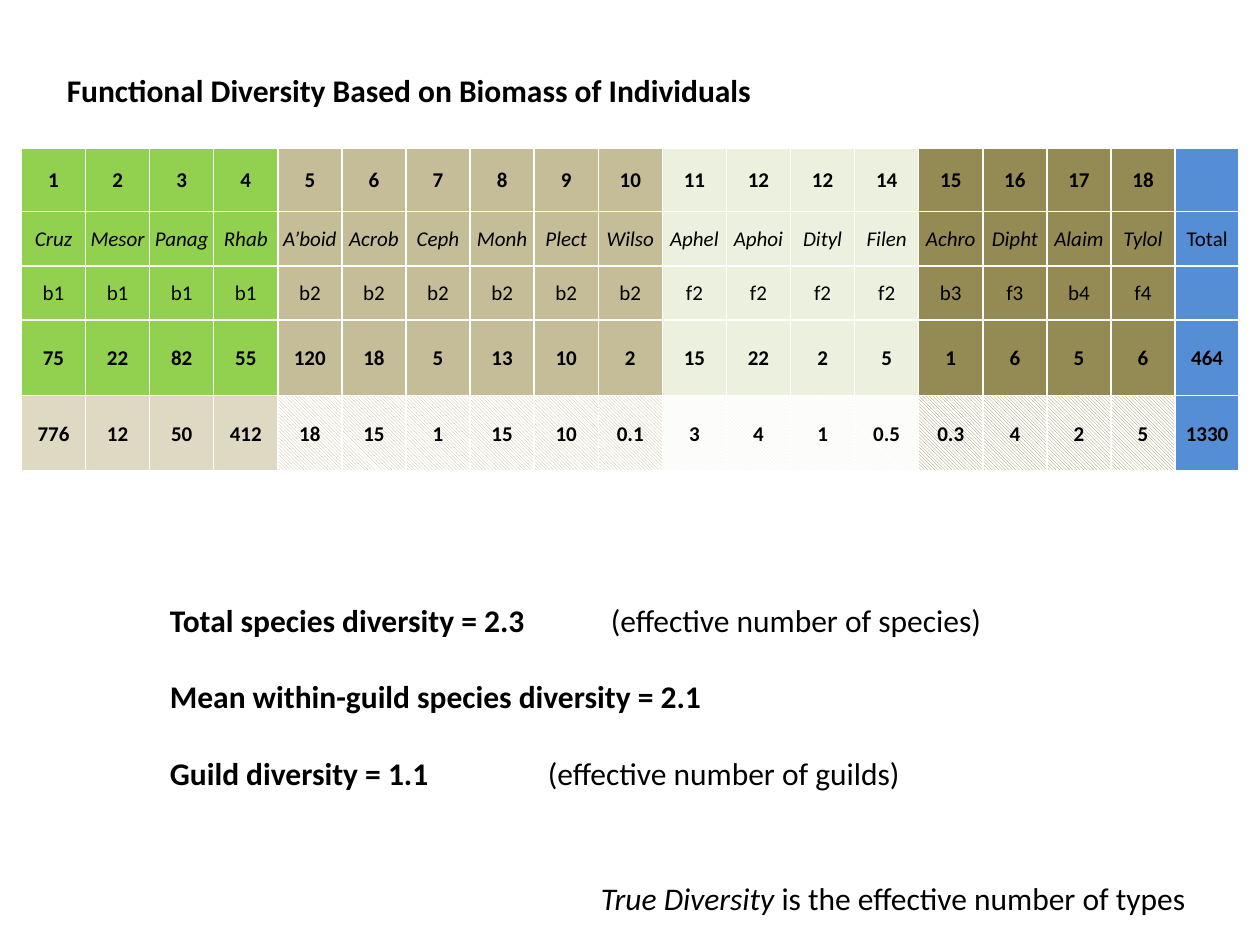
"""Build the functional diversity slide."""
import dataclasses

import lxml.etree
import pptx
import pptx.dml.color
import pptx.enum.dml
import pptx.enum.text
import pptx.oxml.ns
import pptx.util

Inches = pptx.util.Inches
Pt = pptx.util.Pt
Align = pptx.enum.text.PP_ALIGN
Anchor = pptx.enum.text.MSO_ANCHOR


@dataclasses.dataclass(frozen=True)
class Theme:
    font: str = "Calibri"
    ink: str = "000000"
    paper: str = "FFFFFF"
    pale: str = "DDD9C3"
    total: str = "558ED5"
    groups: tuple = (("92D050", 4), ("C4BD97", 6), ("EBF1DE", 4), ("948A54", 4))
    body_size: int = 18
    cell_size: int = 12
    paragraph_gap: int = 22
    border: int = 1


def color(value):
    return pptx.dml.color.RGBColor.from_string(value)


def add_text(para, text, *, theme, size, bold=False, italic=False):
    span = para.add_run()
    span.text = text
    span.font.name = theme.font
    span.font.size = Pt(size)
    span.font.bold = bold
    span.font.italic = italic
    span.font.color.rgb = color(theme.ink)


class SlideBuilder:
    def __init__(self, page, theme):
        self.page = page
        self.theme = theme

    def fit(self, box):
        frame = box.text_frame
        frame.word_wrap = False
        frame.auto_size = pptx.enum.text.MSO_AUTO_SIZE.SHAPE_TO_FIT_TEXT
        frame.vertical_anchor = Anchor.TOP
        return frame

    def title(self, text, left, top, width, height):
        box = self.page.shapes.title
        box.left, box.top = Inches(left), Inches(top)
        box.width, box.height = Inches(width), Inches(height)
        para = self.fit(box).paragraphs[0]
        para.alignment = Align.LEFT
        add_text(para, text, theme=self.theme, size=self.theme.body_size, bold=True)

    def text(self, paragraphs, left, top, width, height):
        box = self.page.shapes.add_textbox(
            Inches(left), Inches(top), Inches(width), Inches(height))
        frame = self.fit(box)
        for index, spans in enumerate(paragraphs):
            para = frame.add_paragraph() if index else frame.paragraphs[0]
            para.space_before = Pt(self.theme.paragraph_gap if index else 0)
            for text, style in spans:
                add_text(para, text, theme=self.theme, size=self.theme.body_size, **style)

    def table(self, rows, heights, left, top, width):
        count = len(rows[0])
        table = self.page.shapes.add_table(
            len(rows), count, Inches(left), Inches(top),
            Inches(width), Inches(sum(heights))).table
        table.first_row = table.horz_banding = False
        for column in table.columns:
            column.width = Inches(width / count)
        for row, height in zip(table.rows, heights):
            row.height = Inches(height)
        shades = [shade for shade, span in self.theme.groups for _ in range(span)]
        shades.append(self.theme.total)
        for row_index, values in enumerate(rows):
            for column_index, value in enumerate(values):
                cell = table.cell(row_index, column_index)
                self.cell_text(cell, value, row_index)
                self.cell_fill(cell, shades[column_index], row_index == len(rows) - 1)
                self.cell_border(cell)

    def cell_text(self, cell, text, row_index):
        cell.margin_left = cell.margin_right = cell.margin_top = Inches(0.01)
        cell.margin_bottom = 0
        cell.vertical_anchor = Anchor.MIDDLE
        para = cell.text_frame.paragraphs[0]
        para.alignment = Align.CENTER
        para.font.size = Pt(self.theme.cell_size)
        if text:
            add_text(para, text, theme=self.theme, size=self.theme.cell_size,
                     bold=row_index not in (1, 2),
                     italic=row_index == 1 and text != "Total")

    def cell_fill(self, cell, shade, is_biomass):
        first_shade = self.theme.groups[0][0]
        if is_biomass and shade not in (first_shade, self.theme.total):
            cell.fill.patterned()
            cell.fill.pattern = pptx.enum.dml.MSO_PATTERN.LIGHT_DOWNWARD_DIAGONAL
            cell.fill.fore_color.rgb = color(shade)
            cell.fill.back_color.rgb = color(self.theme.paper)
        else:
            cell.fill.solid()
            pale = is_biomass and shade == first_shade
            cell.fill.fore_color.rgb = color(self.theme.pale if pale else shade)

    def cell_border(self, cell):
        qn = pptx.oxml.ns.qn
        properties = cell._tc.get_or_add_tcPr()
        for index, side in enumerate(("a:lnL", "a:lnR", "a:lnT", "a:lnB")):
            line = lxml.etree.Element(qn(side), w=str(Pt(self.theme.border)))
            fill = lxml.etree.SubElement(line, qn("a:solidFill"))
            lxml.etree.SubElement(fill, qn("a:srgbClr"), val=self.theme.paper)
            properties.insert(index, line)


def main():
    deck = pptx.Presentation()
    deck.slide_width, deck.slide_height = Inches(10), Inches(7.5)
    page = deck.slides.add_slide(deck.slide_layouts[5])
    builder = SlideBuilder(page, Theme())

    builder.title("Functional Diversity Based on Biomass of Individuals",
                  0.43, 0.51, 5.68, 0.4)

    numbers = "1 2 3 4 5 6 7 8 9 10 11 12 12 14 15 16 17 18".split() + [""]
    genera = ("Cruz Mesor Panag Rhab A’boid Acrob Ceph Monh Plect Wilso "
              "Aphel Aphoi Dityl Filen Achro Dipht Alaim Tylol Total").split()
    guilds = ["b1"] * 4 + ["b2"] * 6 + ["f2"] * 4 + ["b3", "f3", "b4", "f4", ""]
    counts = "75 22 82 55 120 18 5 13 10 2 15 22 2 5 1 6 5 6 464".split()
    biomass = "776 12 50 412 18 15 1 15 10 0.1 3 4 1 0.5 0.3 4 2 5 1330".split()
    builder.table([numbers, genera, guilds, counts, biomass],
                  [0.5, 0.43, 0.43, 0.6, 0.6], 0.17, 1.18, 9.67)

    bold, plain, italic = {"bold": True}, {}, {"italic": True}
    builder.text([
        [("Total species diversity = 2.3", bold),
         ("\t\t(effective number of species)", plain)],
        [("Mean within-guild species diversity = 2.1", bold)],
        [("Guild diversity = 1.1", bold),
         ("\t\t(effective number of guilds)", plain)],
    ], 1.25, 4.72, 7.22, 1.62)
    builder.text([[("True Diversity ", italic),
                   ("is the effective number of types", plain)]],
                 4.67, 6.93, 4.91, 0.4)
    deck.save("out.pptx")


if __name__ == "__main__":
    main()
